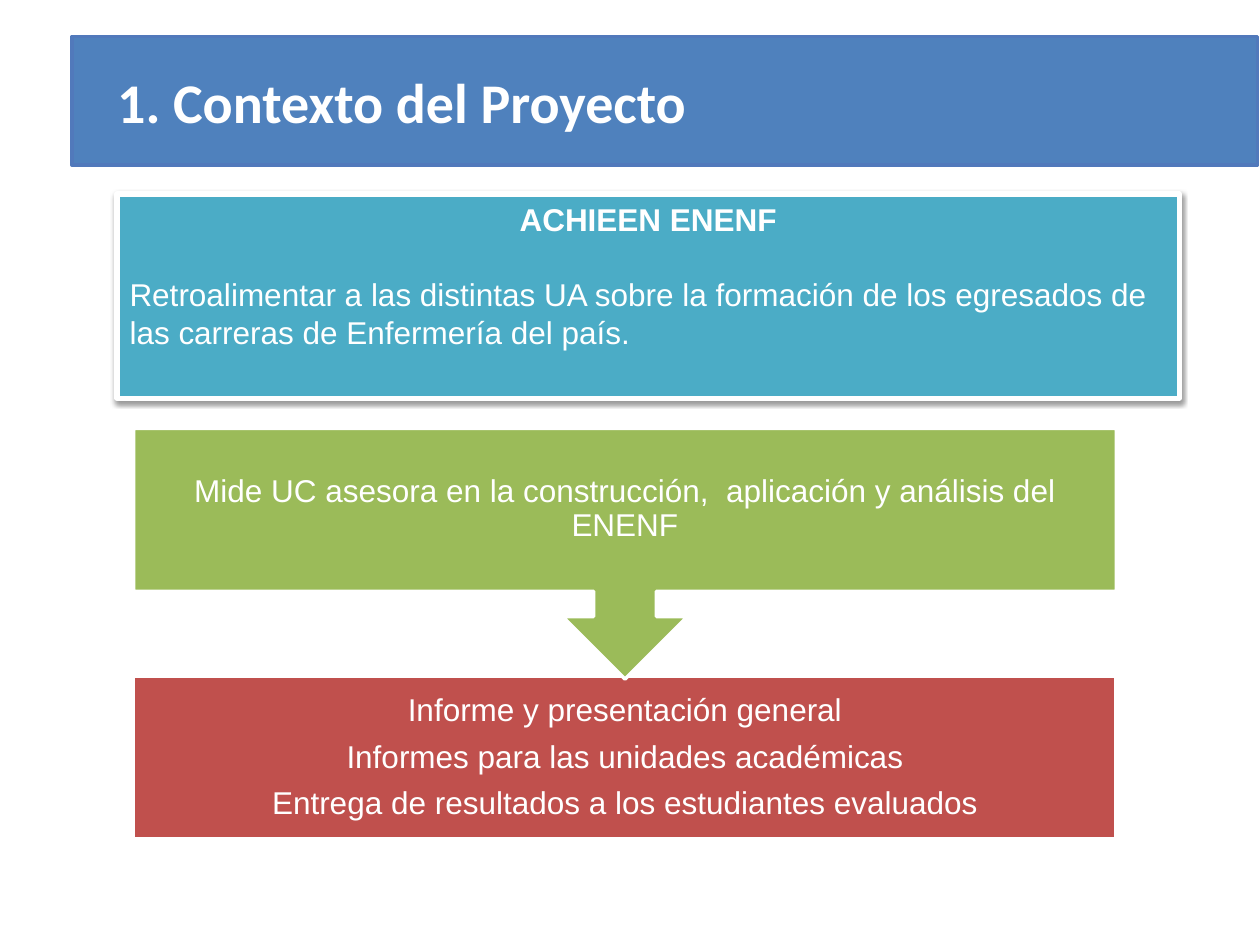
import pptx
import pptx.chart.data
import pptx.dml.color
import pptx.enum.shapes
import pptx.enum.text
import pptx.oxml
import pptx.util

Inches, Pt = pptx.util.Inches, pptx.util.Pt
SHAPE = pptx.enum.shapes.MSO_SHAPE
ALIGN = pptx.enum.text.PP_ALIGN
ANCHOR = pptx.enum.text.MSO_ANCHOR
WHITE = "FFFFFF"


def color(hex_value):
    return pptx.dml.color.RGBColor.from_string(hex_value)


def write(frame, lines, font_format, paragraph_format):
    """Fill a text frame with one formatted paragraph per line."""
    frame.word_wrap = True
    frame.text = "\n".join(lines)
    for paragraph in frame.paragraphs:
        for name, value in paragraph_format.items():
            setattr(paragraph, name, value)
        for name, value in font_format.items():
            setattr(paragraph.font, name, value)
        paragraph.font.color.rgb = color(WHITE)


presentation = pptx.Presentation()
presentation.slide_width, presentation.slide_height = Inches(10), Inches(7.5)
slide = presentation.slides.add_slide(presentation.slide_layouts[5])

# Filled blocks, from back to front
blocks = {}
for part, preset, box, fill, line, width in (
    ("banner", SHAPE.RECTANGLE, (0.57, 0.29, 9.41, 1.02), "4F81BD", "5179BB", 2),
    ("reports", SHAPE.RECTANGLE, (1.06, 5.37, 7.8, 1.29), "C0504D", WHITE, 2),
    ("advice", SHAPE.UP_ARROW_CALLOUT, (1.06, 3.4, 7.8, 1.99), "9BBB59", WHITE, 2),
    ("purpose", SHAPE.RECTANGLE, (0.93, 1.54, 8.43, 1.62), "4BACC6", WHITE, 3),
):
    block = slide.shapes.add_shape(preset, *map(Inches, box))
    block.shadow.inherit = False
    block.fill.solid()
    block.fill.fore_color.rgb = color(fill)
    block.line.color.rgb = color(line)
    block.line.width = Pt(width)
    blocks[part] = block
blocks["advice"].rotation = 180

# Title, in front of its banner
title = slide.shapes.title
title.element.addprevious(blocks["banner"].element)
title.left, title.top, title.width, title.height = map(Inches, (0.83, 0.3, 8.9, 1.01))
title.text_frame.vertical_anchor = ANCHOR.MIDDLE
write(title.text_frame, ["1. Contexto del Proyecto"],
      {"name": "Calibri", "size": Pt(32), "bold": True}, {"alignment": ALIGN.LEFT})

# Purpose of the exam
body_font = {"name": "Arial", "size": Pt(18)}
purpose = blocks["purpose"].text_frame
purpose.vertical_anchor = ANCHOR.TOP
write(purpose, [
    "ACHIEEN ENENF",
    "Retroalimentar a las distintas UA sobre la formación de los egresados "
    "de las carreras de Enfermería del país.",
], body_font, {"alignment": ALIGN.LEFT})
heading, goal = purpose.paragraphs
heading.alignment = ALIGN.CENTER
heading.font.bold = True
goal.space_before = Pt(21)

effects = blocks["purpose"].element.spPr.find(pptx.oxml.ns.qn("a:effectLst"))
effects.append(pptx.oxml.parse_xml(
    f'<a:outerShdw {pptx.oxml.ns.nsdecls("a")} blurRad="{Pt(3.1)}" dist="{Pt(1.6)}" '
    'dir="5400000" rotWithShape="0"><a:srgbClr val="000000">'
    '<a:alpha val="38000"/></a:srgbClr></a:outerShdw>'))

# Labels of the two process steps
step_format = {"alignment": ALIGN.CENTER, "line_spacing": 0.9, "space_after": Pt(7)}
for top, lines in (
    (3.4, ["Mide UC asesora en la construcción,  aplicación y análisis del ENENF"]),
    (5.37, ["Informe y presentación general",
            "Informes para las unidades académicas",
            "Entrega de resultados a los estudiantes evaluados"]),
):
    label = slide.shapes.add_textbox(Inches(1.06), Inches(top), Inches(7.8), Inches(1.29))
    frame = label.text_frame
    frame.vertical_anchor = ANCHOR.MIDDLE
    for side in ("left", "top", "right", "bottom"):
        setattr(frame, f"margin_{side}", Inches(0.14))
    write(frame, lines, body_font, step_format)

presentation.save("out.pptx")
